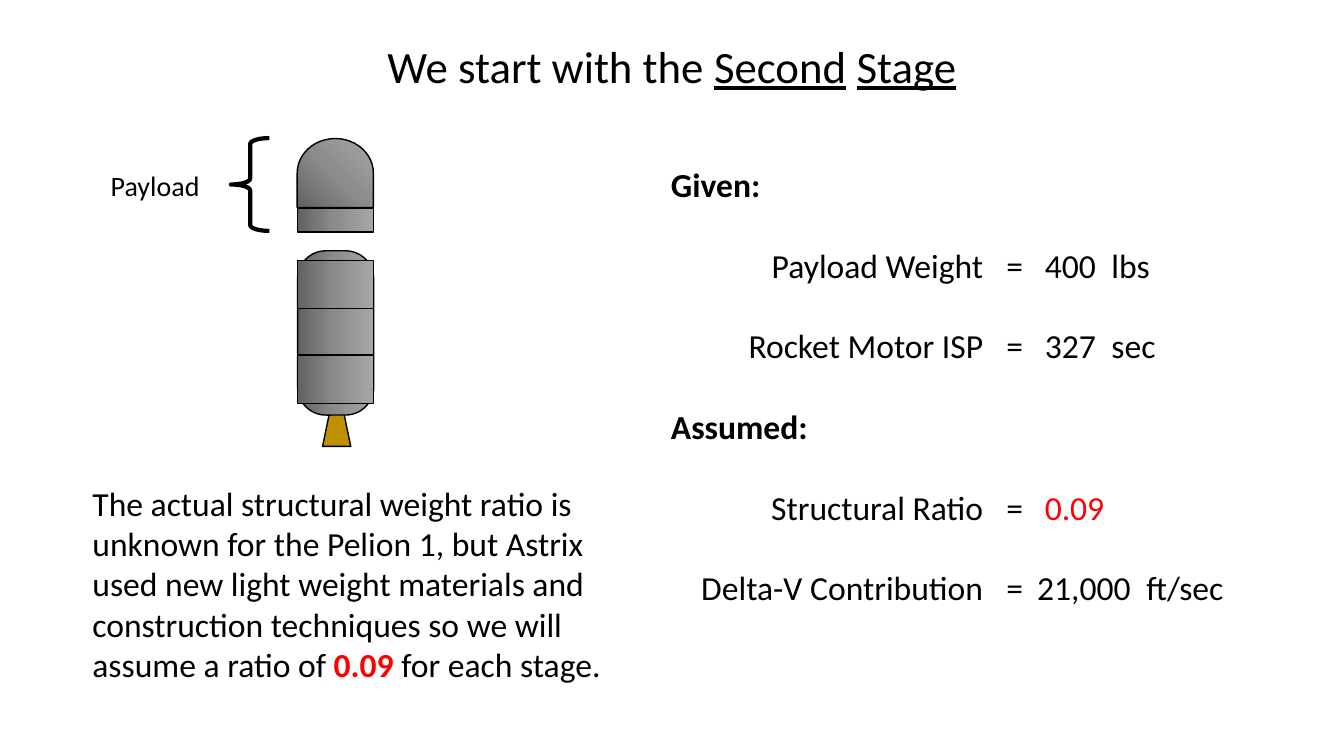
from copy import deepcopy
from dataclasses import dataclass

from lxml.etree import SubElement
from pptx import Presentation
from pptx.dml.color import RGBColor
from pptx.enum.shapes import MSO_SHAPE
from pptx.enum.text import MSO_ANCHOR, MSO_AUTO_SIZE, PP_ALIGN
from pptx.oxml.ns import qn
from pptx.util import Cm, Pt

COLORS = {
    "text": "000000", "accent": "FF0000", "nozzle": "BF9000",
    "dark": "626262", "mid": "8C8C8C", "light": "A6A6A6",
}
FONT = "Calibri"
LABEL_END, EQUALS_X = 7.87, 8.45
HULL_X, HULL_W = 7.5, 1.92


@dataclass(frozen=True)
class Part:
    kind: MSO_SHAPE
    x: float
    y: float
    w: float
    h: float
    adj: tuple[float, ...] = ()
    fill: str = "metal"
    angle: int = 0
    rotation: int = 0
    line: float = 1


@dataclass(frozen=True)
class Fact:
    label: str
    value: str
    unit: str = ""
    color: str = "text"
    value_x: float = 9.42
    unit_x: float = 11.1


@dataclass(frozen=True)
class Section:
    heading: str
    facts: tuple[Fact, ...]


PARTS = [
    Part(MSO_SHAPE.TRAPEZOID, 8.13, 10.39, 0.71, 0.86, fill="nozzle"),
    Part(MSO_SHAPE.ROUNDED_RECTANGLE, HULL_X, 6.32, HULL_W, 4.14, adj=(0.371,)),
    *[Part(MSO_SHAPE.RECTANGLE, HULL_X, y, HULL_W, h)
      for y, h in ((6.56, 1.22), (8.95, 1.22), (5.24, 0.61))],
    Part(MSO_SHAPE.FLOWCHART_DELAY, 7.58, 3.4, 1.74, HULL_W, angle=315, rotation=270),
    Part(MSO_SHAPE.LEFT_BRACE, 5.82, 3.48, 0.97, 2.34, adj=(0.153, 0.5), fill="", line=3),
]

SECTIONS = [
    Section("Given:", (
        Fact("Payload Weight", "400", "lbs"),
        Fact("Rocket Motor ISP", "327", "sec"),
    )),
    Section("Assumed:", (
        Fact("Structural Ratio", "0.09", color="accent"),
        Fact("Delta-V Contribution", "21,000", "ft/sec", value_x=9.23, unit_x=11.98),
    )),
]


def rgb(name: str) -> RGBColor:
    return RGBColor.from_string(COLORS[name])


def fill_metal(sp, angle: int) -> None:
    sp.fill.gradient()
    sp.fill.gradient_angle = angle
    stops = next(sp._element.spPr.iter(qn("a:gsLst")))
    stops.insert(1, deepcopy(stops[0]))
    for i, name in enumerate(("dark", "mid", "light")):
        stop = sp.fill.gradient_stops[i]
        stop.color.rgb = rgb(name)
        stop.position = i / 2


def add_part(s, part: Part) -> None:
    sp = s.shapes.add_shape(part.kind, Cm(part.x), Cm(part.y), Cm(part.w), Cm(part.h))
    sp.shadow.inherit = False
    sp.rotation = part.rotation
    for i, value in enumerate(part.adj):
        sp.adjustments[i] = value
    if part.fill == "metal":
        fill_metal(sp, part.angle)
    elif part.fill:
        sp.fill.solid()
        sp.fill.fore_color.rgb = rgb(part.fill)
    else:
        sp.fill.background()
    sp.line.color.rgb = rgb("text")
    sp.line.width = Pt(part.line)


def add_run(p, text: str, size: float = 24, color: str = "text",
            bold: bool = False, underline: bool = False) -> None:
    r = p.add_run()
    r.text = text
    r.font.name = FONT
    r.font.size = Pt(size)
    r.font.bold = bold
    r.font.underline = underline
    r.font.color.rgb = rgb(color)


def add_text(s, x: float, y: float, w: float, h: float):
    tf = s.shapes.add_textbox(Cm(x), Cm(y), Cm(w), Cm(h)).text_frame
    tf.word_wrap = True
    return tf


def add_title(s) -> None:
    title = s.shapes.title
    title.left, title.top, title.width, title.height = Cm(8.79), Cm(0.84), Cm(16.28), Cm(1.63)
    tf = title.text_frame
    tf.auto_size = MSO_AUTO_SIZE.NONE
    tf.vertical_anchor = MSO_ANCHOR.TOP
    p = tf.paragraphs[0]
    p.alignment = PP_ALIGN.CENTER
    for text, underline in (("We start with the ", False), ("Second", True),
                            (" ", False), ("Stage", True)):
        add_run(p, text, 32, underline=underline)


def set_tabs(p, fact: Fact) -> None:
    tabs = SubElement(p._p.get_or_add_pPr(), qn("a:tabLst"))
    for pos, align in ((LABEL_END, "r"), (EQUALS_X, "l"), (fact.value_x, "l"), (fact.unit_x, "l")):
        SubElement(tabs, qn("a:tab"), pos=str(Cm(pos)), algn=align)


def add_fact(p, fact: Fact) -> None:
    set_tabs(p, fact)
    add_run(p, f"\t{fact.label}\t=\t")
    add_run(p, fact.value, color=fact.color)
    if fact.unit:
        add_run(p, f"\t{fact.unit}")


def add_sections(s) -> None:
    tf = add_text(s, 16.66, 4.01, 14.58, 12.57)
    p = tf.paragraphs[0]
    for i, section in enumerate(SECTIONS):
        if i:
            p = tf.add_paragraph()
            p.space_before = Pt(28.8)
        add_run(p, section.heading, bold=True)
        for fact in section.facts:
            p = tf.add_paragraph()
            p.space_before = Pt(28.8)
            add_fact(p, fact)


def main() -> None:
    prs = Presentation()
    prs.slide_width, prs.slide_height = Cm(33.87), Cm(19.05)
    s = prs.slides.add_slide(prs.slide_layouts[5])
    add_title(s)
    for part in PARTS:
        add_part(s, part)
    add_sections(s)
    add_run(add_text(s, 2.54, 4.11, 3.3, 1.12).paragraphs[0], "Payload", 20)
    p = add_text(s, 2.08, 12.04, 13.67, 5.38).paragraphs[0]
    add_run(p, "The actual structural weight ratio is unknown for the Pelion 1, but Astrix "
               "used new light weight materials and construction techniques so we will "
               "assume a ratio of ")
    add_run(p, "0.09", color="accent", bold=True)
    add_run(p, " for each stage.")
    prs.save("out.pptx")


if __name__ == "__main__":
    main()
